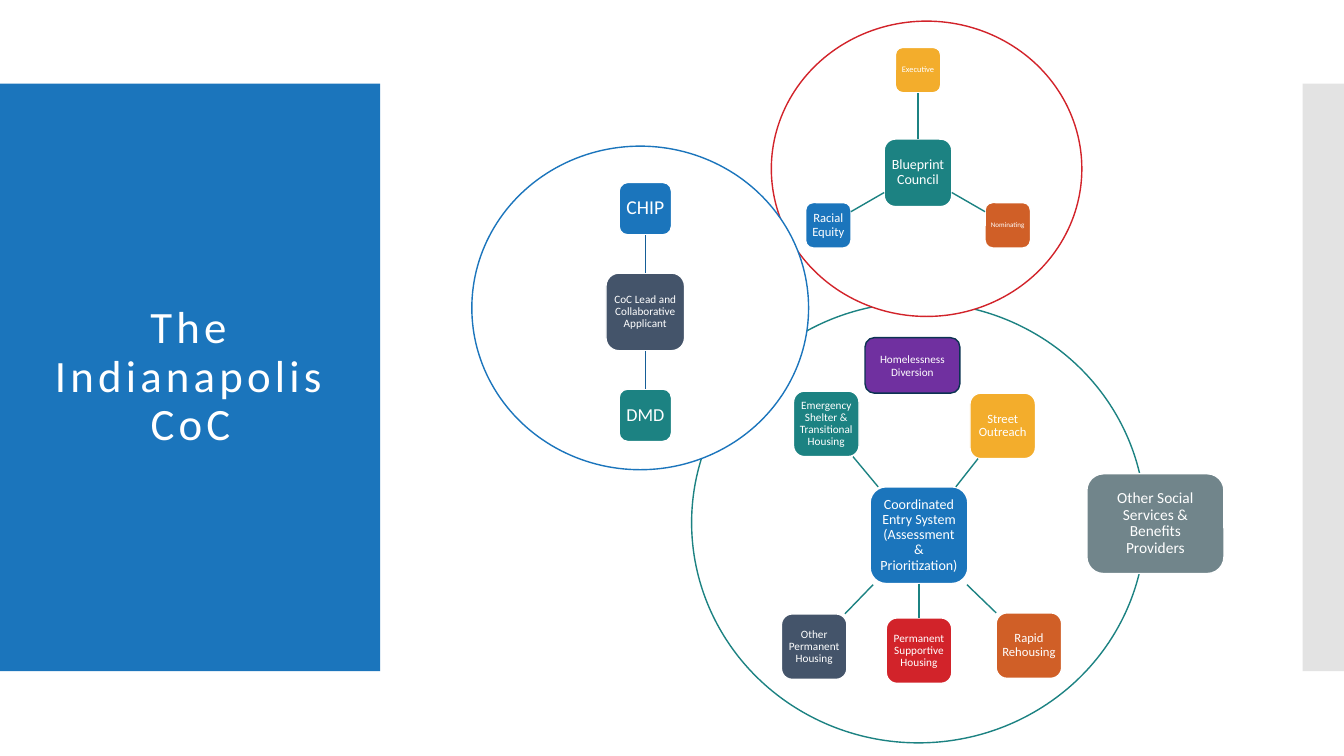
from dataclasses import dataclass

from lxml.etree import SubElement
from pptx import Presentation
from pptx.dml.color import RGBColor
from pptx.enum.shapes import MSO_CONNECTOR, MSO_SHAPE
from pptx.enum.text import MSO_ANCHOR, MSO_AUTO_SIZE, PP_ALIGN
from pptx.oxml.ns import qn
from pptx.shapes.autoshape import Shape
from pptx.slide import Slide
from pptx.util import Emu, Pt

PX = 9144
COLOURS = {
    "white": "FFFFFF", "blue": "1B75BC", "teal": "1C8282", "gold": "F3AD2C",
    "orange": "D05F27", "red": "D2232A", "slate": "44546A", "purple": "7030A0",
    "navy": "0C3352", "grey": "71858B", "silver": "C8C8C8", "deep blue": "165E97",
}
TOP, BOTTOM = 0, 2


@dataclass(frozen=True)
class Circle:
    """Outline around one cluster, with its line colour and optional fill."""
    left: int
    top: int
    width: int
    height: int
    line: str
    fill: str | None = "white"


@dataclass(frozen=True)
class Node:
    """Rounded box with a label."""
    label: str
    left: int
    top: int
    width: int
    height: int
    fill: str
    size: int
    inset: tuple[int, int] = (3, 3)
    line: str = "white"
    spacing: float = 0.9


@dataclass(frozen=True)
class Link:
    """Line between two points, joined to (label, site) pairs if given."""
    start: tuple[int, int]
    end: tuple[int, int]
    joints: tuple[tuple[str, int], ...] = ()


@dataclass(frozen=True)
class Cluster:
    """Circle with its nodes and the links between them."""
    circle: Circle
    nodes: list[Node]
    links: list[Link]
    link_colour: str


ENTRY = "Coordinated Entry System (Assessment & Prioritization)"
SUPPORTIVE = "Permanent Supportive Housing"
COUNCIL = "Blueprint Council"
LEAD = "CoC Lead and Collaborative Applicant"

CLUSTERS = [
    Cluster(
        Circle(686, 300, 450, 437, "teal", None),
        [
            Node(ENTRY, 863, 483, 97, 96, "blue", 10),
            Node("Street Outreach", 962, 390, 65, 65, "gold", 9),
            Node("Rapid Rehousing", 988, 608, 65, 65, "orange", 9, (1, 3)),
            Node(SUPPORTIVE, 879, 613, 65, 65, "red", 8, (2, 2)),
            Node("Other Permanent Housing", 775, 609, 65, 65, "slate", 8, (2, 2)),
            Node("Emergency Shelter & Transitional Housing", 787, 388, 65, 65,
                 "teal", 8, (2, 2)),
            Node("Homelessness Diversion", 858, 335, 94, 55, "purple", 8,
                 (10, 5), "navy", 1.0),
            Node("Other Social Services & Benefits Providers", 1078, 470, 136, 99,
                 "grey", 11, (7, 7)),
        ],
        [
            Link((948, 483), (970, 455)),
            Link((959, 580), (988, 608)),
            Link((911, 579), (911, 613), ((ENTRY, BOTTOM), (SUPPORTIVE, TOP))),
            Link((866, 580), (838, 609)),
            Link((871, 483), (846, 453)),
        ],
        "teal",
    ),
    Cluster(
        Circle(765, 21, 308, 293, "red"),
        [
            Node(COUNCIL, 877, 138, 67, 67, "teal", 10),
            Node("Executive", 888, 47, 45, 45, "gold", 6, (2, 2)),
            Node("Nominating", 977, 201, 45, 45, "orange", 5, (1, 1)),
            Node("Racial Equity", 799, 201, 45, 45, "blue", 9),
        ],
        [
            Link((910, 138), (910, 92), ((COUNCIL, TOP), ("Executive", BOTTOM))),
            Link((944, 191), (977, 210)),
            Link((877, 191), (844, 210)),
        ],
        "teal",
    ),
    Cluster(
        Circle(468, 145, 334, 321, "blue"),
        [
            Node(LEAD, 601, 271, 78, 77, "slate", 8, (2, 2)),
            Node("CHIP", 614, 181, 52, 52, "blue", 14, (4, 4)),
            Node("DMD", 614, 386, 52, 52, "teal", 13, (4, 4)),
        ],
        [
            Link((640, 271), (640, 233), ((LEAD, TOP), ("CHIP", BOTTOM))),
            Link((640, 348), (640, 386), ((LEAD, BOTTOM), ("DMD", TOP))),
        ],
        "deep blue",
    ),
]


def rgb(name: str) -> RGBColor:
    """Return the named colour."""
    return RGBColor.from_string(COLOURS[name])


def add_box(page: Slide, kind: MSO_SHAPE, place: tuple[int, int, int, int],
            fill: str | None, line: str | None) -> Shape:
    """Add a flat preset shape."""
    box = page.shapes.add_shape(kind, *(Emu(value * PX) for value in place))
    box.shadow.inherit = False
    if fill:
        box.fill.solid()
        box.fill.fore_color.rgb = rgb(fill)
    else:
        box.fill.background()
    if line:
        box.line.color.rgb = rgb(line)
        box.line.width = Pt(1)
    else:
        box.line.fill.background()
    return box


def write_label(box: Shape, label: str, size: int, spacing: float) -> None:
    """Write centred white text in a shape."""
    frame = box.text_frame
    frame.text = label
    frame.word_wrap = True
    frame.auto_size = MSO_AUTO_SIZE.NONE
    frame.vertical_anchor = MSO_ANCHOR.MIDDLE
    para = frame.paragraphs[0]
    para.alignment = PP_ALIGN.CENTER
    para.line_spacing = spacing
    font = para.runs[0].font
    font.name = "Calibri"
    font.size = Pt(size)
    font.color.rgb = rgb("white")


def add_node(page: Slide, node: Node) -> Shape:
    """Add a labelled rounded box."""
    place = (node.left, node.top, node.width, node.height)
    box = add_box(page, MSO_SHAPE.ROUNDED_RECTANGLE, place, node.fill, node.line)
    write_label(box, node.label, node.size, node.spacing)
    frame = box.text_frame
    across, down = (Emu(value * PX) for value in node.inset)
    frame.margin_left = frame.margin_right = across
    frame.margin_top = frame.margin_bottom = down
    return box


def add_link(page: Slide, link: Link, colour: str, boxes: dict[str, Shape]) -> None:
    """Add a line and join it to its boxes."""
    points = (Emu(value * PX) for value in link.start + link.end)
    line = page.shapes.add_connector(MSO_CONNECTOR.STRAIGHT, *points)
    line.line.color.rgb = rgb(colour)
    line.line.width = Pt(1)
    SubElement(line.element.spPr, qn("a:effectLst"))
    for connect, (label, site) in zip((line.begin_connect, line.end_connect), link.joints):
        connect(boxes[label], site)


def add_cluster(page: Slide, cluster: Cluster) -> None:
    """Add a circle with its nodes and links."""
    circle = cluster.circle
    place = (circle.left, circle.top, circle.width, circle.height)
    add_box(page, MSO_SHAPE.OVAL, place, circle.fill, circle.line)
    boxes = {node.label: add_node(page, node) for node in cluster.nodes}
    for link in cluster.links:
        add_link(page, link, cluster.link_colour, boxes)


def add_title(page: Slide) -> None:
    """Place the title on its blue panel, with the pale strip at the right."""
    title = page.shapes.title
    title.left, title.top, title.width, title.height = (
        Emu(value * PX) for value in (28, 123, 322, 503))
    write_label(title, "The Indianapolis CoC", 32, 0.9)
    title.text_frame.paragraphs[0].runs[0].font._element.set("spc", "300")
    panel = add_box(page, MSO_SHAPE.RECTANGLE, (0, 83, 377, 583), "blue", None)
    strip = add_box(page, MSO_SHAPE.RECTANGLE, (1292, 83, 41, 583), "silver", None)
    tint = strip.element.spPr.find(qn("a:solidFill")).find(qn("a:srgbClr"))
    SubElement(tint, qn("a:alpha")).set("val", "50000")
    for box in (panel, strip):
        title.element.addprevious(box.element)


def main() -> None:
    """Build and save the slide."""
    deck = Presentation()
    deck.slide_width, deck.slide_height = Emu(1333 * PX), Emu(750 * PX)
    page = deck.slides.add_slide(deck.slide_layouts[5])
    add_title(page)
    for cluster in CLUSTERS:
        add_cluster(page, cluster)
    deck.save("out.pptx")


if __name__ == "__main__":
    main()
